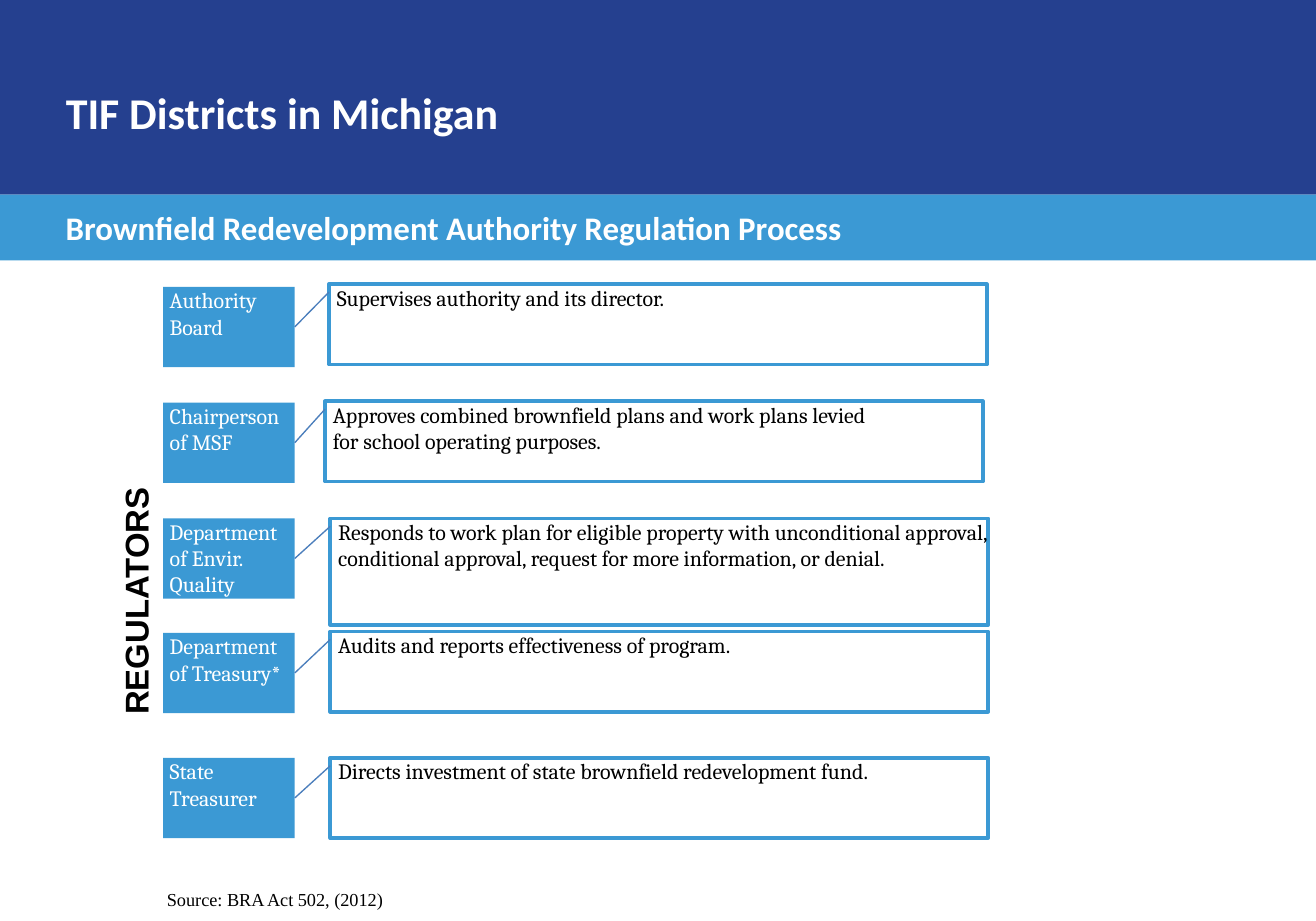
import lxml.etree
import pptx
import pptx.dml.color
import pptx.enum.shapes
import pptx.enum.text
import pptx.oxml.ns
import pptx.util

COLUMNS, ROWS = 100, 70
NAVY, SKY, STEEL, WHITE, BLACK = "25408F", "3B99D4", "4B7EBC", "FFFFFF", "000000"
ALIGN = pptx.enum.text.PP_ALIGN


def color(hex_string):
    return pptx.dml.color.RGBColor.from_string(hex_string)


def write(shape, text, font="Cambria", size=12, fill=BLACK, bold=False,
          align=ALIGN.LEFT, inset=0, wrap=True):
    """Each line of the text becomes a paragraph."""
    frame = shape.text_frame
    frame.word_wrap = wrap
    frame.vertical_anchor = pptx.enum.text.MSO_ANCHOR.TOP
    frame.margin_left = frame.margin_right = pptx.util.Inches(inset)
    frame.margin_top = frame.margin_bottom = pptx.util.Inches(inset / 2)
    frame.text = text
    for paragraph in frame.paragraphs:
        paragraph.alignment = align
        paragraph.font.name = font
        paragraph.font.size = pptx.util.Pt(size)
        paragraph.font.bold = bold
        paragraph.font.color.rgb = color(fill)


class SlideBuilder:
    def __init__(self, presentation):
        self.column = presentation.slide_width / COLUMNS
        self.row = presentation.slide_height / ROWS
        self.slide = presentation.slides.add_slide(presentation.slide_layouts[5])
        self.shapes = self.slide.shapes

    def place(self, left, top, width, height):
        return (round(left * self.column), round(top * self.row),
                round(width * self.column), round(height * self.row))

    def title(self, text, box, **style):
        title = self.shapes.title
        title.left, title.top, title.width, title.height = self.place(*box)
        write(title, text, **style)
        # Bring the title in front of the bands
        title.element.getparent().append(title.element)

    def text(self, text, box, rotation=0, **style):
        shape = self.shapes.add_textbox(*self.place(*box))
        shape.rotation = rotation
        write(shape, text, **style)

    def box(self, box, fill=None, line=None):
        rectangle = pptx.enum.shapes.MSO_SHAPE.RECTANGLE
        shape = self.shapes.add_shape(rectangle, *self.place(*box))
        shape.shadow.inherit = False
        if fill:
            shape.fill.solid()
            shape.fill.fore_color.rgb = color(fill)
        else:
            shape.fill.background()
        if line:
            shape.line.color.rgb = color(line)
            shape.line.width = pptx.util.Pt(2)
        else:
            shape.line.fill.background()
        return shape

    def callout_line(self, label, left, top):
        end_left, end_top, _, _ = self.place(left, top, 0, 0)
        straight = pptx.enum.shapes.MSO_CONNECTOR.STRAIGHT
        connector = self.shapes.add_connector(straight, 0, 0, end_left, end_top)
        connector.begin_connect(label, 3)
        connector.line.color.rgb = color(STEEL)
        connector.line.width = pptx.util.Pt(0.75)
        lxml.etree.SubElement(connector.element.spPr, pptx.oxml.ns.qn("a:effectLst"))

    def regulator(self, name, duty, label_top, left, top, height=6.1):
        label = self.box((12.4, label_top, 10, 6.1), fill=SKY)
        write(label, name, fill=WHITE)
        label.text_frame.margin_left = pptx.util.Inches(0.05)
        description = self.box((left, top, 50, height), line=SKY)
        write(description, duty)
        description.text_frame.margin_left = pptx.util.Inches(0.06)
        self.callout_line(label, left, top + 0.6)


# Regulator, duty, label top, then description left, top and height
REGULATORS = [
    ("Authority Board", "Supervises authority and its director.", 21.8, 25, 21.6),
    ("Chairperson of MSF",
     "Approves combined brownfield plans and work plans levied\n"
     "for school operating purposes.", 30.6, 24.7, 30.5),
    ("Department\nof Envir.\nQuality",
     "Responds to work plan for eligible property with unconditional approval, "
     "conditional approval, request for more information, or denial.",
     39.4, 25.1, 39.4, 8.1),
    ("Department of Treasury*", "Audits and reports effectiveness of program.",
     48.1, 25.1, 48),
    ("State Treasurer",
     "Directs investment of state brownfield redevelopment fund.", 57.6, 25.1, 57.6),
]


def main():
    presentation = pptx.Presentation()
    presentation.slide_width = pptx.util.Inches(10)
    presentation.slide_height = pptx.util.Inches(7)
    builder = SlideBuilder(presentation)

    # Heading bands
    builder.box((0, 0, COLUMNS, 14.8), fill=NAVY)
    builder.box((0, 14.8, COLUMNS, 5), fill=SKY)
    heading = {"font": "Calibri", "fill": WHITE, "bold": True}
    builder.title("TIF Districts in Michigan", (5, 6.5, 90.2, 3.6), size=24, **heading)
    builder.text("Brownfield Redevelopment Authority Regulation Process",
                 (5, 15.8, 83.4, 3), size=18, **heading)

    # Regulators and their duties
    builder.text("REGULATORS", (-12.6, 44.2, 45.8, 3), rotation=270,
                 font="Arial", size=18, bold=True, align=ALIGN.CENTER)
    for regulator in REGULATORS:
        builder.regulator(*regulator)

    # Source
    builder.text("Source: BRA Act 502, (2012)", (11.7, 67, 20, 2.7),
                 font="Times New Roman", size=10, inset=0.1, wrap=False)
    presentation.save("out.pptx")


if __name__ == "__main__":
    main()
